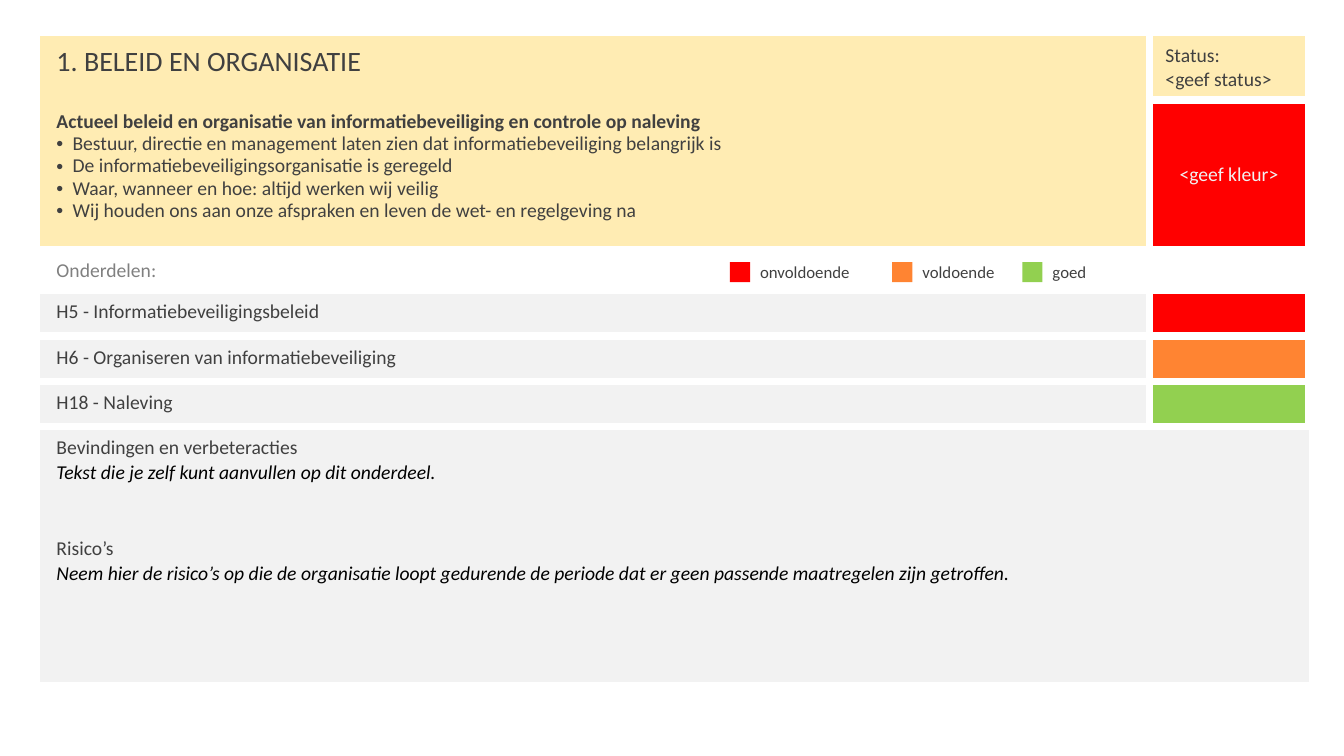
from dataclasses import dataclass

import pptx
import pptx.dml.color
import pptx.enum.shapes
import pptx.enum.text
import pptx.oxml
import pptx.oxml.ns
import pptx.util

ALIGN = pptx.enum.text.PP_ALIGN
ANCHOR = pptx.enum.text.MSO_ANCHOR


@dataclass(frozen=True)
class Theme:
    font: str = "Calibri"
    ink: str = "404040"
    black: str = "000000"
    muted: str = "808080"
    white: str = "FFFFFF"
    pale: str = "F2F2F2"
    cream: str = "FFECB3"
    red: str = "FF0000"
    orange: str = "FF8432"
    green: str = "92D050"
    title_size: float = 20
    body_size: float = 14
    legend_size: float = 12
    gutter: float = 6


THEME = Theme()
WIDTH, HEIGHT = pptx.util.Inches(13.33), pptx.util.Inches(7.5)


def across(percent: float) -> int:
    """Length as a percentage of the slide's width."""
    return round(WIDTH * percent / 100)


def down(percent: float) -> int:
    """Length as a percentage of the slide's height."""
    return round(HEIGHT * percent / 100)


@dataclass(frozen=True)
class Line:
    text: str
    color: str = THEME.ink
    size: float = THEME.body_size
    bold: bool = False
    italic: bool = False
    bullet: bool = False
    spacing: float | None = 18
    before: float = 0
    align: ALIGN = ALIGN.LEFT


@dataclass(frozen=True)
class Block:
    fill: str
    lines: tuple[Line, ...] = ()
    right_inset: float = 1.2
    anchor: ANCHOR = ANCHOR.TOP


@dataclass(frozen=True)
class Row:
    height: float
    left: Block
    right: Block | None = None  # without a right block the left one spans both columns


@dataclass(frozen=True)
class LegendItem:
    label: str
    color: str
    left: float
    width: float = 8.48


def chapter(text: str, color: str) -> Row:
    return Row(6, Block(THEME.pale, (Line(text),)), Block(color))


def point(text: str) -> Line:
    return Line(text, bullet=True, spacing=16)


COLUMNS = (82.52, 11.85)
ROWS = (
    Row(8.13,
        Block(THEME.cream, (Line("1. BELEID EN ORGANISATIE", size=THEME.title_size, spacing=None),), 5.93),
        Block(THEME.cream, (Line("Status:", spacing=None), Line("<geef status>", spacing=None)))),
    Row(19.73,
        Block(THEME.cream, (
            Line("Actueel beleid en organisatie van informatiebeveiliging en controle op naleving", bold=True),
            point("Bestuur, directie en management laten zien dat informatiebeveiliging belangrijk is"),
            point("De informatiebeveiligingsorganisatie is geregeld"),
            point("Waar, wanneer en hoe: altijd werken wij veilig"),
            point("Wij houden ons aan onze afspraken en leven de wet- en regelgeving na")), 5.93),
        Block(THEME.red, (Line("<geef kleur>", THEME.pale, spacing=None, align=ALIGN.CENTER),),
              anchor=ANCHOR.MIDDLE)),
    Row(5.2, Block(THEME.white, (Line("Onderdelen:", THEME.muted),))),
    chapter("H5 - Informatiebeveiligingsbeleid", THEME.red),
    chapter("H6 - Organiseren van informatiebeveiliging", THEME.orange),
    chapter("H18 - Naleving", THEME.green),
    Row(33.73, Block(THEME.pale, (
        Line("Bevindingen en verbeteracties"),
        Line("Tekst die je zelf kunt aanvullen op dit onderdeel.", THEME.black, italic=True),
        Line("Risico’s", before=36),
        Line("Neem hier de risico’s op die de organisatie loopt gedurende de periode dat er geen "
             "passende maatregelen zijn getroffen.", THEME.black, italic=True)))),
)
LEGEND = (
    LegendItem("onvoldoende", THEME.red, 54.31),
    LegendItem("voldoende", THEME.orange, 66.39),
    LegendItem("goed", THEME.green, 76.07, 7.05),
)


def rgb(color: str) -> pptx.dml.color.RGBColor:
    return pptx.dml.color.RGBColor.from_string(color)


def add_bullet(para) -> None:
    properties = para._p.get_or_add_pPr()
    indent = across(1.2)
    properties.set("marL", str(indent))
    properties.set("indent", str(-indent))
    namespace = pptx.oxml.ns.nsdecls("a")
    properties.append(pptx.oxml.parse_xml(f'<a:buFont {namespace} typeface="Arial"/>'))
    properties.append(pptx.oxml.parse_xml(f'<a:buChar {namespace} char="•"/>'))


def write_lines(frame, lines: tuple[Line, ...]) -> None:
    for index, line in enumerate(lines):
        para = frame.add_paragraph() if index else frame.paragraphs[0]
        para.alignment = line.align
        if line.spacing:
            para.line_spacing = pptx.util.Pt(line.spacing)
        if line.before:
            para.space_before = pptx.util.Pt(line.before)
        if line.bullet:
            add_bullet(para)
        span = para.add_run()
        span.text = line.text
        span.font.name = THEME.font
        span.font.size = pptx.util.Pt(line.size)
        span.font.bold = line.bold
        span.font.italic = line.italic
        span.font.color.rgb = rgb(line.color)


def set_borders(cell, sides: str) -> None:
    """Draw white gutters on the sides named in L, R, T, B and clear the others."""
    properties = cell._tc.get_or_add_tcPr()
    gutter = pptx.util.Pt(THEME.gutter)
    for index, side in enumerate("LRTB"):
        paint = (f'<a:solidFill><a:srgbClr val="{THEME.white}"/></a:solidFill>'
                 if side in sides else "<a:noFill/>")
        border = f'<a:ln{side} {pptx.oxml.ns.nsdecls("a")} w="{gutter}">{paint}</a:ln{side}>'
        properties.insert(index, pptx.oxml.parse_xml(border))


def gutter_sides(row: int, column: int) -> str:
    """Gutters lie between cells and right of the statuses, but not inside the header."""
    last = len(ROWS) - 1
    sides = "" if row == last else ("R" if column == 0 else "LR")
    if row > 0 and (row, column) != (1, 0):
        sides += "T"
    if row < last and (row, column) != (0, 0):
        sides += "B"
    return sides


def fill_cell(cell, block: Block) -> None:
    cell.fill.solid()
    cell.fill.fore_color.rgb = rgb(block.fill)
    cell.vertical_anchor = block.anchor
    if block.lines:
        cell.margin_left, cell.margin_right = across(1.2), across(block.right_inset)
        cell.margin_top = cell.margin_bottom = down(1.07)
        write_lines(cell.text_frame, block.lines)


def add_report(page) -> None:
    table = page.shapes.add_table(len(ROWS), len(COLUMNS), across(3), down(4.8), across(sum(COLUMNS)),
                                  down(sum(row.height for row in ROWS))).table
    table.first_row = table.horz_banding = False
    for column, width in zip(table.columns, COLUMNS):
        column.width = across(width)
    for index, row in enumerate(ROWS):
        table.rows[index].height = down(row.height)
        blocks = (row.left, row.right or Block(row.left.fill))
        for column, block in enumerate(blocks):
            cell = table.cell(index, column)
            fill_cell(cell, block)
            set_borders(cell, gutter_sides(index, column))
        if row.right is None:
            table.cell(index, 0).merge(table.cell(index, 1))


def add_legend_item(page, item: LegendItem) -> None:
    side = across(1.5)
    swatch = page.shapes.add_shape(pptx.enum.shapes.MSO_SHAPE.RECTANGLE,
                                   across(item.left), down(34.67), side, side)
    swatch.shadow.inherit = False
    swatch.fill.solid()
    swatch.fill.fore_color.rgb = rgb(item.color)
    swatch.line.fill.background()
    box = page.shapes.add_textbox(across(item.left) + side, down(34), across(item.width), down(4))
    box.text_frame.word_wrap = True
    write_lines(box.text_frame, (Line(item.label, size=THEME.legend_size, spacing=None),))


def main() -> None:
    deck = pptx.Presentation()
    deck.slide_width, deck.slide_height = WIDTH, HEIGHT
    page = deck.slides.add_slide(deck.slide_layouts[6])
    add_report(page)
    for item in LEGEND:
        add_legend_item(page, item)
    deck.save("out.pptx")


if __name__ == "__main__":
    main()
